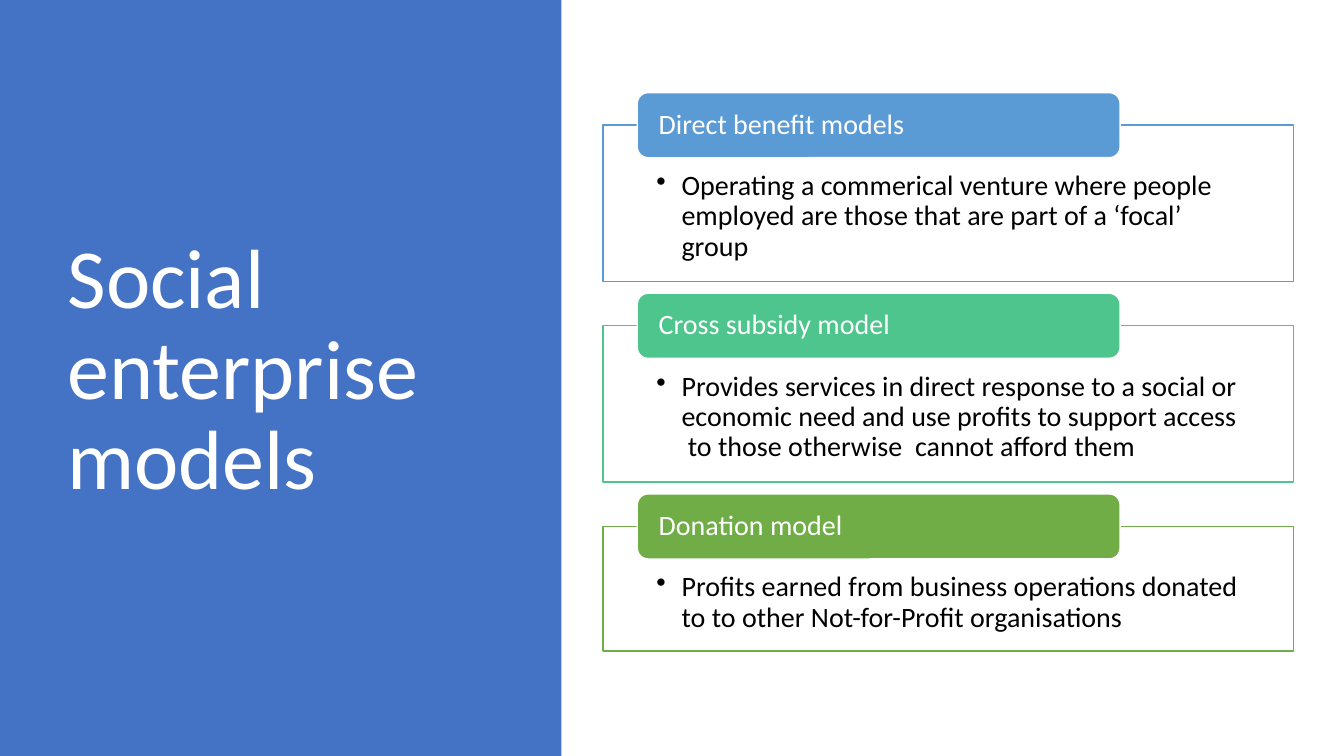
import pptx
import pptx.dml.color
import pptx.enum.shapes
import pptx.enum.text
import pptx.oxml
import pptx.oxml.ns
import pptx.util

Pt = pptx.util.Pt
SHAPES = pptx.enum.shapes.MSO_SHAPE
ANCHOR = pptx.enum.text.MSO_ANCHOR
COLOURS = {
    "band": "4472C4",
    "direct": "5B9BD5",
    "cross": "4DC58D",
    "donation": "70AD47",
    "light": "FFFFFF",
    "dark": "000000",
}
MODELS = [
    ("direct", "Direct benefit models", 111.6,
     "Operating a commerical venture where people employed are those that are part of a ‘focal’ group"),
    ("cross", "Cross subsidy model", 111.6,
     "Provides services in direct response to a social or economic need and use profits "
     "to support access  to those otherwise  cannot afford them"),
    ("donation", "Donation model", 89.3,
     "Profits earned from business operations donated to to other Not-for-Profit organisations"),
]
FIRST_TOP = 89.3
PITCH = 143.3
TAB_RISE = 23.1


class ModelSlide:
    """Hold the slide and its style, with a method for each kind of element."""

    font = "Calibri"

    def __init__(self, slide):
        self.slide = slide

    def colour(self, key):
        return pptx.dml.color.RGBColor.from_string(COLOURS[key])

    def add_words(self, shape, words, size, key, anchor, insets=None, bullet=False):
        frame = shape.text_frame
        frame.word_wrap = True
        frame.auto_size = pptx.enum.text.MSO_AUTO_SIZE.NONE
        frame.vertical_anchor = anchor
        if insets:
            side, top, bottom = insets
            frame.margin_left = frame.margin_right = Pt(side)
            frame.margin_top, frame.margin_bottom = Pt(top), Pt(bottom)
        paragraph = frame.paragraphs[0]
        if bullet:
            properties = paragraph._p.get_or_add_pPr()
            properties.set("marL", str(Pt(18)))
            properties.set("indent", str(-Pt(18)))
            mark = pptx.oxml.parse_xml(
                f'<a:buChar {pptx.oxml.ns.nsdecls("a")} char="•"/>')
            properties.append(mark)
        paragraph.alignment = pptx.enum.text.PP_ALIGN.LEFT
        paragraph.line_spacing = 0.9
        run = paragraph.add_run()
        run.text = words
        run.font.name = self.font
        run.font.size = Pt(size)
        run.font.color.rgb = self.colour(key)

    def block(self, kind, bounds, fill, line=None, opacity=None):
        shape = self.slide.shapes.add_shape(kind, *map(Pt, bounds))
        shape.shadow.inherit = False
        shape.fill.solid()
        shape.fill.fore_color.rgb = self.colour(fill)
        if opacity:
            tint = shape._element.spPr.find(
                pptx.oxml.ns.qn("a:solidFill"))[0]
            tint.append(pptx.oxml.parse_xml(
                f'<a:alpha {pptx.oxml.ns.nsdecls("a")} val="{opacity * 1000}"/>'))
        if line:
            shape.line.color.rgb = self.colour(line)
            shape.line.width = Pt(1)
        else:
            shape.line.fill.background()
        return shape

    def title(self, words, bounds):
        heading = self.slide.shapes.title
        heading.left, heading.top, heading.width, heading.height = map(Pt, bounds)
        self.add_words(heading, words, 60, "light", ANCHOR.MIDDLE)

    def band(self, bounds):
        band = self.block(SHAPES.RECTANGLE, bounds, "band")
        self.slide.shapes.title._element.addprevious(band._element)

    def model(self, top, key, name, height, description):
        panel = self.block(SHAPES.RECTANGLE, (430.6, top, 493.2, height),
                           "light", key, 90)
        self.add_words(panel, description, 20, "dark", ANCHOR.TOP,
                       (38.2, 33.1, 11.5), bullet=True)
        tab = self.block(SHAPES.ROUNDED_RECTANGLE,
                         (455.2, top - TAB_RISE, 344.9, 46.5), key, "light")
        self.add_words(tab, name, 20, "light", ANCHOR.MIDDLE, (13, 0, 0))


def main():
    deck = pptx.Presentation()
    deck.slide_width, deck.slide_height = Pt(960), Pt(540)
    page = ModelSlide(deck.slides.add_slide(deck.slide_layouts[5]))
    page.band((0, 0, 401, 540))
    page.title("Social enterprise models", (41, 49, 299.5, 433.4))
    for index, details in enumerate(MODELS):
        page.model(FIRST_TOP + index * PITCH, *details)
    deck.save("out.pptx")


if __name__ == "__main__":
    main()
